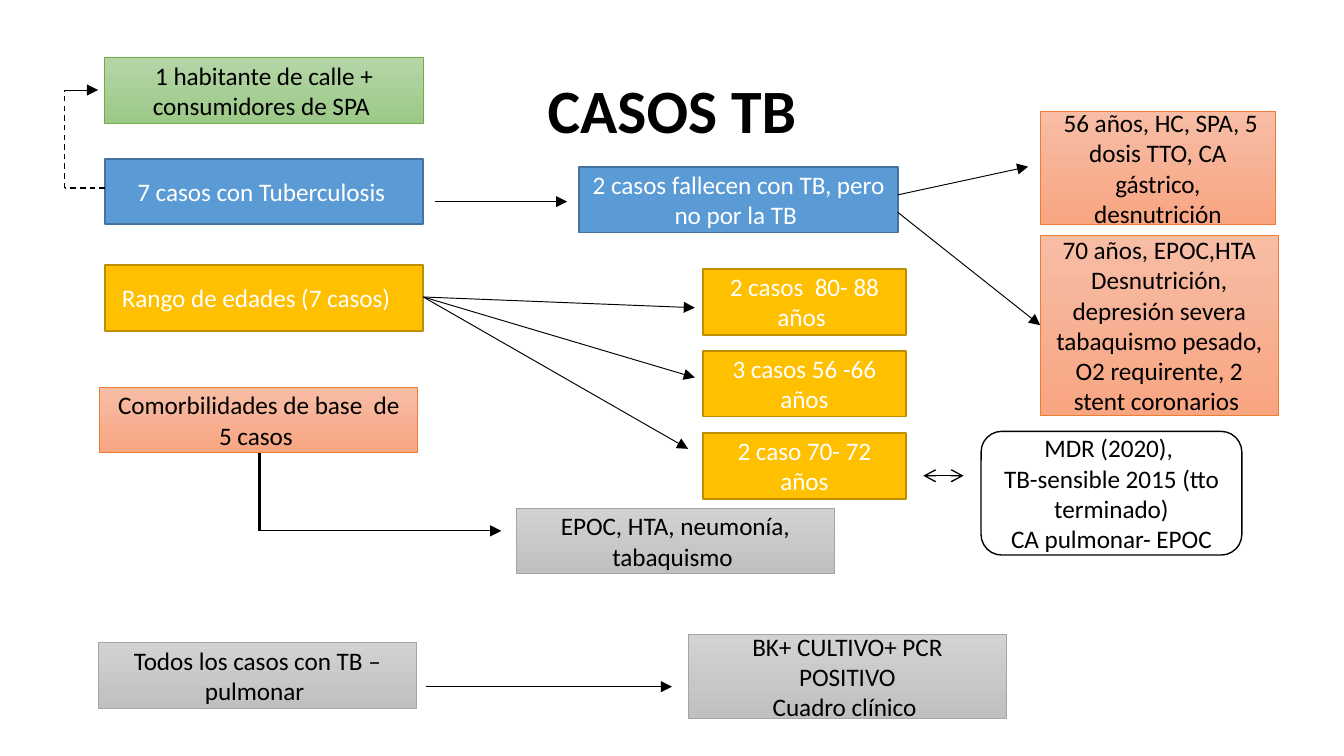
from pptx import Presentation
from pptx.dml.color import RGBColor
from pptx.enum.dml import MSO_LINE
from pptx.enum.shapes import MSO_CONNECTOR, MSO_SHAPE
from pptx.enum.text import MSO_ANCHOR, MSO_AUTO_SIZE, PP_ALIGN
from pptx.oxml.ns import qn
from pptx.util import Inches, Pt
from lxml import etree

RECT, ROUNDED = MSO_SHAPE.RECTANGLE, MSO_SHAPE.ROUNDED_RECTANGLE
STRAIGHT, DASH = MSO_CONNECTOR.STRAIGHT, MSO_LINE.DASH
CENTER, MIDDLE, NO_FIT = PP_ALIGN.CENTER, MSO_ANCHOR.MIDDLE, MSO_AUTO_SIZE.NONE

BLACK, WHITE = RGBColor(0, 0, 0), RGBColor(255, 255, 255)
BLUE, BLUE_EDGE = RGBColor(0x5B, 0x9B, 0xD5), RGBColor(0x43, 0x73, 0x9E)
GOLD, GOLD_EDGE = RGBColor(0xFF, 0xC0, 0x00), RGBColor(0xBD, 0x8E, 0x00)
GREEN_TOP, GREEN_END = RGBColor(0xB5, 0xD5, 0xA7), RGBColor(0x9C, 0xC9, 0x87)
GREEN_EDGE = RGBColor(0x70, 0xAD, 0x47)
ORANGE_TOP, ORANGE_END = RGBColor(0xF7, 0xBD, 0xA5), RGBColor(0xF8, 0xA5, 0x82)
ORANGE_EDGE = RGBColor(0xED, 0x7D, 0x31)
GREY_TOP, GREY_END = RGBColor(0xD2, 0xD2, 0xD2), RGBColor(0xC0, 0xC0, 0xC0)
GREY_EDGE = RGBColor(0xA5, 0xA5, 0xA5)

# Fill colours from top to bottom, edge colour, edge width, text colour
BLUE_BOX = ((BLUE,), BLUE_EDGE, 1, WHITE)
GOLD_BOX = ((GOLD,), GOLD_EDGE, 1, WHITE)
GREEN_BOX = ((GREEN_TOP, GREEN_END), GREEN_EDGE, 0.5, BLACK)
ORANGE_BOX = ((ORANGE_TOP, ORANGE_END), ORANGE_EDGE, 0.5, BLACK)
GREY_BOX = ((GREY_TOP, GREY_END), GREY_EDGE, 0.5, BLACK)
OUTLINE_BOX = ((), BLACK, 0.75, BLACK)

# Left and right text insets
NORMAL, NARROW, SHIFTED_LEFT = (0.08, 0.08), (0.12, 0.12), (0.08, 0.2)
WIDE, LOW = 2.37, 0.49
AGE_LEFT, AGE_TOP, AGE_STEP, AGE_WIDTH = 5.23, 2, 0.61, 1.51
AGE_GROUPS = ["2 casos  80- 88 años ", "3 casos 56 -66 años", "2 caso 70- 72 años"]
AGE_ARROW_ENDS = [(5.17, 2.29), (5.17, 2.81), (5.12, 3.34)]

BOXES = [
    ("1 habitante de calle + consumidores de SPA ", 0.78, 0.43, WIDE, LOW, GREEN_BOX),
    ("7 casos con Tuberculosis ", 0.78, 1.18, WIDE, LOW, BLUE_BOX),
    ("2 casos fallecen con TB, pero no por la TB ", 4.31, 1.24, WIDE, LOW, BLUE_BOX),
    (" 56 años, HC, SPA, 5 dosis TTO, CA gástrico, desnutrición",
     7.74, 0.83, 1.75, 0.84, ORANGE_BOX),
    ("70 años, EPOC,HTA Desnutrición, depresión severa tabaquismo pesado, "
     "O2 requirente, 2 stent coronarios ", 7.74, 1.75, 1.77, 1.34, ORANGE_BOX),
    ("Comorbilidades de base  de 5 casos ", 0.74, 2.88, WIDE, LOW, ORANGE_BOX),
    ("EPOC, HTA, neumonía, tabaquismo ", 3.84, 3.78, WIDE, LOW, GREY_BOX),
    ("Todos los casos con TB –pulmonar ", 0.73, 4.78, WIDE, LOW, GREY_BOX),
    ("BK+ CULTIVO+ PCR POSITIVO\nCuadro clínico ",
     5.12, 4.72, WIDE, 0.63, GREY_BOX, RECT, NARROW),
]
ARROWS = [
    ((3.24, 1.5), (4.22, 1.5)),
    ((6.68, 1.45), (7.65, 1.24)),
    ((6.68, 1.58), (7.74, 2.42)),
    ((0.48, 0.67), (0.73, 0.67)),
    ((1.93, 3.95), (3.73, 3.95)),
    ((3.17, 5.11), (5, 5.11)),
]


def set_text(shape, text, size, color, bold=False, insets=NORMAL):
    frame = shape.text_frame
    frame.text = text
    left, right = map(Inches, insets)
    layout = {"word_wrap": True, "auto_size": NO_FIT, "vertical_anchor": MIDDLE,
              "margin_left": left, "margin_right": right,
              "margin_top": Inches(0.04), "margin_bottom": Inches(0.04)}
    for name, value in layout.items():
        setattr(frame, name, value)
    look = {"name": "Calibri", "size": Pt(size), "bold": bold}
    for para in frame.paragraphs:
        para.alignment = CENTER
        for span in para.runs:
            span.font.color.rgb = color
            for name, value in look.items():
                setattr(span.font, name, value)


def add_title(page, text):
    title = page.shapes.title
    place = {"left": 0.69, "top": 0.3, "width": 8.62, "height": 1.09}
    for name, value in place.items():
        setattr(title, name, Inches(value))
    set_text(title, text, 33, BLACK, bold=True)
    title.text_frame.paragraphs[0].line_spacing = 0.9


def set_fill(fill, colors):
    if not colors:
        fill.background()
    elif len(colors) == 1:
        fill.solid()
        fill.fore_color.rgb = colors[0]
    else:
        fill.gradient()
        fill.gradient_angle = 270
        for stop, color in zip(fill.gradient_stops, colors):
            stop.color.rgb = color


def add_box(page, text, left, top, width, height, style, kind=RECT, insets=NORMAL):
    colors, edge, edge_width, text_color = style
    place = map(Inches, (left, top, width, height))
    box = page.shapes.add_shape(kind, *place)
    box.shadow.inherit = False
    set_fill(box.fill, colors)
    box.line.color.rgb = edge
    box.line.width = Pt(edge_width)
    set_text(box, text, 13.5, text_color, insets=insets)


def add_line(page, start, end, width=0.5, dash=None, head=None, tail=None):
    """Draw a line; head is the arrowhead at start and tail the one at end."""
    line = page.shapes.add_connector(STRAIGHT, *map(Inches, start + end))
    line.line.color.rgb = BLACK
    line.line.width = Pt(width)
    if dash:
        line.line.dash_style = dash
    outline = line.line._get_or_add_ln()
    for tag, arrow in (("a:headEnd", head), ("a:tailEnd", tail)):
        if arrow:
            etree.SubElement(outline, qn(tag), type=arrow)
    etree.SubElement(line._element.spPr, qn("a:effectLst"))


def add_age_groups(page):
    add_box(page, "Rango de edades (7 casos)", 0.78, 1.97, WIDE, LOW, GOLD_BOX,
            insets=SHIFTED_LEFT)
    for row, (text, end) in enumerate(zip(AGE_GROUPS, AGE_ARROW_ENDS)):
        add_box(page, text, AGE_LEFT, AGE_TOP + row * AGE_STEP, AGE_WIDTH, LOW, GOLD_BOX)
        add_line(page, (3.15, 2.21), end, tail="triangle")
    add_line(page, (6.87, 3.54), (7.17, 3.54), 0.75, head="arrow", tail="arrow")
    add_box(page, "MDR (2020), \nTB-sensible 2015 (tto terminado)\nCA pulmonar- EPOC",
            7.3, 3.21, 1.94, 0.92, OUTLINE_BOX, ROUNDED)


def main():
    deck = Presentation()
    deck.slide_width = Inches(10)
    deck.slide_height = deck.slide_width * 9 // 16
    page = deck.slides.add_slide(deck.slide_layouts[5])
    add_title(page, "CASOS TB")
    for box in BOXES:
        add_box(page, *box)
    add_age_groups(page)
    for start, end in ARROWS:
        add_line(page, start, end, tail="triangle")
    add_line(page, (0.78, 1.4), (0.48, 1.4), 0.75, DASH)
    add_line(page, (0.48, 1.4), (0.48, 0.67), 0.75, DASH)
    add_line(page, (1.93, 3.37), (1.93, 3.95), 1.5)
    deck.save("out.pptx")


if __name__ == "__main__":
    main()
